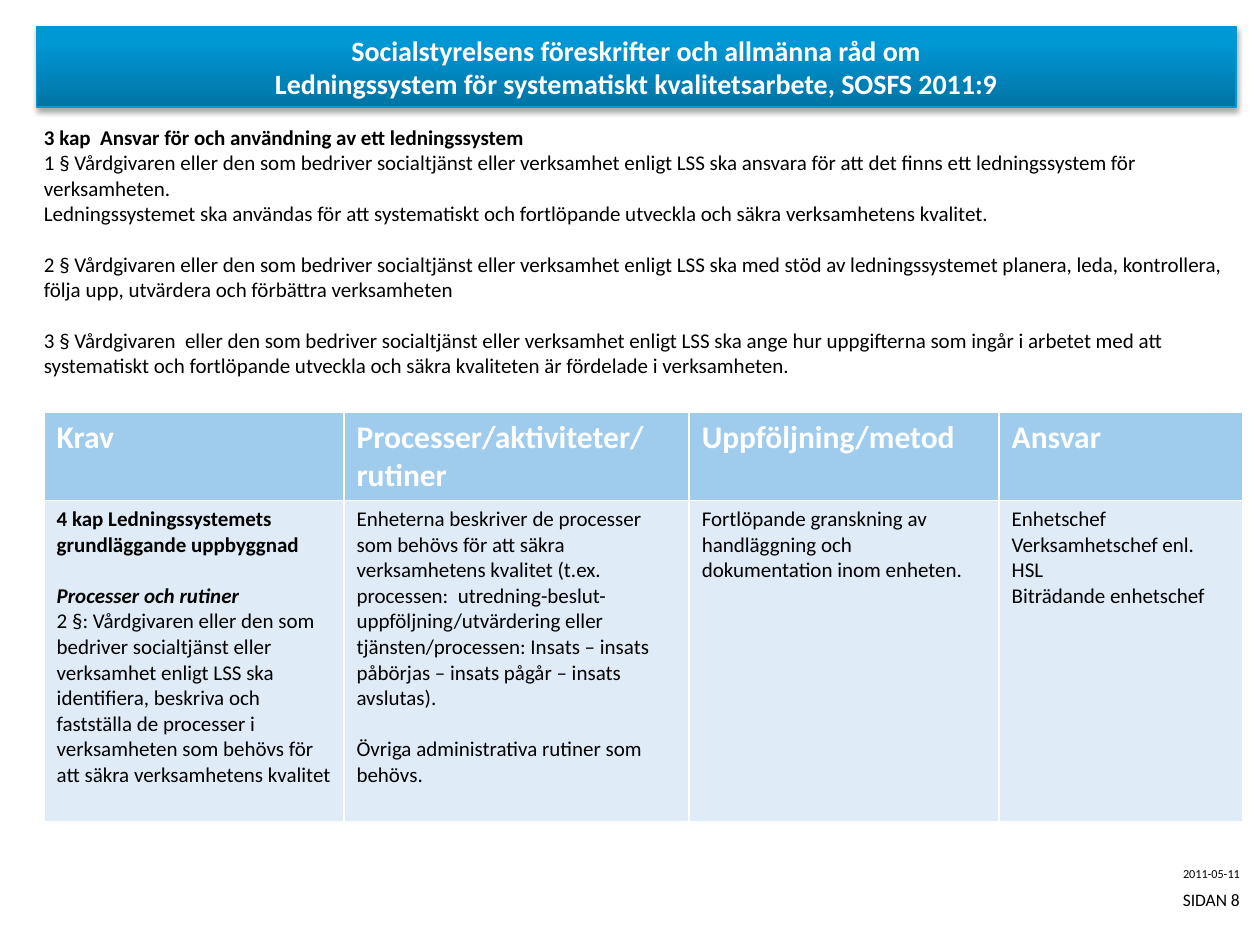
from lxml import etree
from pptx import Presentation
from pptx.dml.color import RGBColor
from pptx.enum import shapes, text
from pptx.oxml import ns
from pptx.util import Inches, Pt

THEME = {
    "font": "Calibri",
    "black": "000000", "white": "FFFFFF",
    "head": "9FCBED", "body": "DFECF8", "line": "0099D7",
    "fade": [(0, "0074A4"), (80, "0097D5"), (100, "0098D6")],
    "title": 16, "label": 18, "text": 12, "page": 10, "date": 7,
    "gap": 14.65,
}

TITLE = [
    ("Socialstyrelsens föreskrifter och allmänna råd om", "b"),
    ("Ledningssystem för systematiskt kvalitetsarbete, SOSFS 2011:9", "b"),
]
RULES = [
    ("3 kap  Ansvar för och användning av ett ledningssystem", "b"),
    ("1 § Vårdgivaren eller den som bedriver socialtjänst eller verksamhet enligt LSS "
     "ska ansvara för att det finns ett ledningssystem för verksamheten.", ""),
    ("Ledningssystemet ska användas för att systematiskt och fortlöpande utveckla "
     "och säkra verksamhetens kvalitet.", ""),
    ("2 § Vårdgivaren eller den som bedriver socialtjänst eller verksamhet enligt LSS "
     "ska med stöd av ledningssystemet planera, leda, kontrollera, följa upp, "
     "utvärdera och förbättra verksamheten", "g"),
    ("3 § Vårdgivaren  eller den som bedriver socialtjänst eller verksamhet enligt LSS "
     "ska ange hur uppgifterna som ingår i arbetet med att systematiskt och "
     "fortlöpande utveckla och säkra kvaliteten är fördelade i verksamheten.", "g"),
]
COLUMNS = [
    (2.38, "Krav", [
        ("4 kap Ledningssystemets grundläggande uppbyggnad", "b"),
        ("Processer och rutiner", "gbi"),
        ("2 §: Vårdgivaren eller den som bedriver socialtjänst eller verksamhet "
         "enligt LSS ska identifiera, beskriva och fastställa de processer i "
         "verksamheten som behövs för att säkra verksamhetens kvalitet", ""),
    ]),
    (2.74, "Processer/aktiviteter/rutiner", [
        ("Enheterna beskriver de processer som behövs för att säkra verksamhetens "
         "kvalitet (t.ex. processen:  utredning-beslut-uppföljning/utvärdering eller "
         "tjänsten/processen: Insats – insats påbörjas – insats pågår – insats "
         "avslutas).", ""),
        ("Övriga administrativa rutiner som behövs.", "g"),
    ]),
    (2.46, "Uppföljning/metod", [
        ("Fortlöpande granskning av handläggning och dokumentation inom enheten.", ""),
    ]),
    (1.93, "Ansvar", [
        ("Enhetschef", ""),
        ("Verksamhetschef enl. HSL", ""),
        ("Biträdande enhetschef", ""),
    ]),
]
ROWS = [0.69, 2.55]
FOOTER = [("2011-05-11", "date", 6.84), ("SIDAN 8", "page", 7.04)]


def color(name):
    return RGBColor.from_string(THEME[name])


def write(frame, items, size, ink="black", align=text.PP_ALIGN.LEFT):
    frame.word_wrap = True
    for i, (words, style) in enumerate(items):
        para = frame.paragraphs[0] if i == 0 else frame.add_paragraph()
        para.text = words
        para.alignment = align
        if "g" in style:
            para.space_before = Pt(THEME["gap"])
        font = para.font
        font.name = THEME["font"]
        font.size = Pt(THEME[size])
        font.bold = "b" in style
        font.italic = "i" in style
        font.color.rgb = color(ink)


def add_box(slide, *place):
    return slide.shapes.add_textbox(*map(Inches, place)).text_frame


def add_title(slide):
    place = map(Inches, (0.29, 0.21, 9.52, 0.64))
    bar = slide.shapes.add_shape(shapes.MSO_SHAPE.RECTANGLE, *place)
    bar.line.color.rgb = color("line")
    bar.line.width = Pt(0.75)
    bar.fill.gradient()
    bar.fill.gradient_angle = 90
    stops = bar._element.spPr.find(ns.qn("a:gradFill")).find(ns.qn("a:gsLst"))
    for old in list(stops):
        stops.remove(old)
    for pos, tone in THEME["fade"]:
        stop = etree.SubElement(stops, ns.qn("a:gs"), pos=str(pos * 1000))
        etree.SubElement(stop, ns.qn("a:srgbClr"), val=tone)
    bar.shadow.inherit = False
    effect = bar._element.spPr.find(ns.qn("a:effectLst"))
    shade = etree.SubElement(
        effect, ns.qn("a:outerShdw"), blurRad=str(Pt(3.1)), dist=str(Pt(1.8)),
        dir="5400000", rotWithShape="0")
    tone = etree.SubElement(shade, ns.qn("a:srgbClr"), val=THEME["black"])
    etree.SubElement(tone, ns.qn("a:alpha"), val="35000")
    write(bar.text_frame, TITLE, "title", "white", text.PP_ALIGN.CENTER)


def add_grid(slide):
    wide = sum(col[0] for col in COLUMNS)
    place = map(Inches, (0.35, 3.27, wide, sum(ROWS)))
    grid = slide.shapes.add_table(len(ROWS), len(COLUMNS), *place).table
    grid.horz_banding = False
    for row, high in zip(grid.rows, ROWS):
        row.height = Inches(high)
    for i, (width, label, body) in enumerate(COLUMNS):
        grid.columns[i].width = Inches(width)
        parts = [([(label, "b")], "label", "white", "head"),
                 (body, "text", "black", "body")]
        for j, (items, size, ink, fill) in enumerate(parts):
            cell = grid.cell(j, i)
            cell.fill.solid()
            cell.fill.fore_color.rgb = color(fill)
            write(cell.text_frame, items, size, ink)


def add_footer(slide):
    for words, size, top in FOOTER:
        frame = add_box(slide, 8.8, top, 1.04, 0.19)
        frame.margin_left = frame.margin_right = 0
        frame.margin_top = frame.margin_bottom = 0
        frame.vertical_anchor = text.MSO_ANCHOR.MIDDLE
        write(frame, [(words, "")], size, align=text.PP_ALIGN.RIGHT)


def main():
    deck = Presentation()
    deck.slide_width, deck.slide_height = Inches(10), Inches(7.5)
    slide = deck.slides.add_slide(deck.slide_layouts[6])
    add_footer(slide)
    add_grid(slide)
    write(add_box(slide, 0.25, 0.94, 9.59, 2.12), RULES, "text")
    add_title(slide)
    deck.save("out.pptx")


if __name__ == "__main__":
    main()
